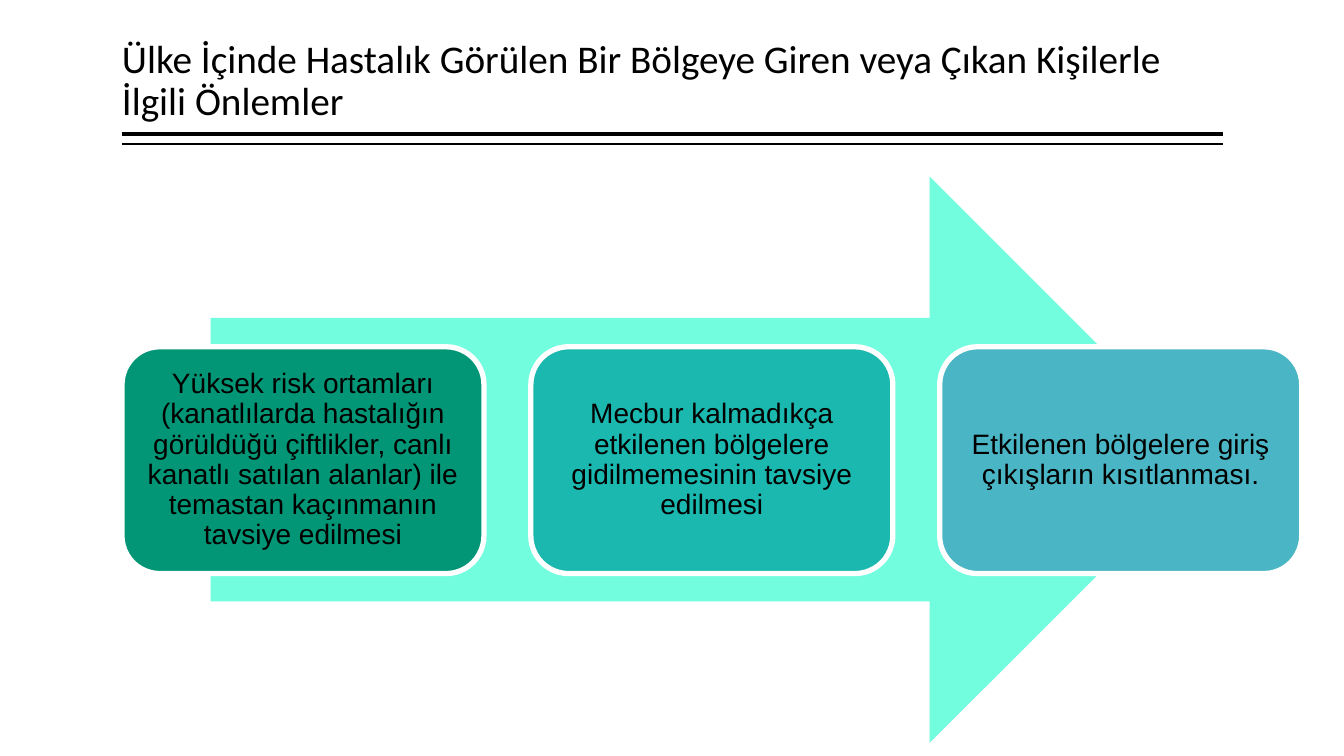
import pptx
import pptx.util
import pptx.dml.color
import pptx.enum.shapes
import pptx.enum.text
from lxml import etree

Inches, Pt = pptx.util.Inches, pptx.util.Pt
RGB = pptx.dml.color.RGBColor.from_string
SHAPE = pptx.enum.shapes.MSO_SHAPE
ANCHOR = pptx.enum.text.MSO_ANCHOR
ALIGN = pptx.enum.text.PP_ALIGN

THEME = {
    "ink": RGB("000000"),
    "outline": RGB("FFFFFF"),
    "arrow": RGB("72FDDF"),
    "cards": [RGB("029676"), RGB("1BB8B0"), RGB("4AB5C4")],
    "title": {"name": "Calibri", "size": Pt(28), "bold": False},
    "body": {"name": "Arial", "size": Pt(20)},
}
LEFT, WIDTH = 1.21, 10.92
CARD_TOP, CARD_W, CARD_H, CARD_STEP = 3.44, 3.59, 2.25, 4.055
CARD_TEXTS = [
    "Yüksek risk ortamları (kanatlılarda hastalığın görüldüğü çiftlikler, "
    "canlı kanatlı satılan alanlar) ile temastan kaçınmanın tavsiye edilmesi",
    "Mecbur kalmadıkça etkilenen bölgelere gidilmemesinin tavsiye edilmesi",
    "Etkilenen bölgelere giriş çıkışların kısıtlanması.",
]


def write_text(sp, text, font, align, anchor, inset_x, inset_y):
    tf = sp.text_frame
    frame_format = {
        "word_wrap": True, "auto_size": pptx.enum.text.MSO_AUTO_SIZE.NONE,
        "vertical_anchor": anchor,
        "margin_left": Inches(inset_x), "margin_right": Inches(inset_x),
        "margin_top": Inches(inset_y), "margin_bottom": Inches(inset_y),
    }
    for name, value in frame_format.items():
        setattr(tf, name, value)
    p = tf.paragraphs[0]
    p.alignment, p.line_spacing = align, 0.9
    r = p.add_run()
    r.text = text
    for name, value in font.items():
        setattr(r.font, name, value)
    r.font.color.rgb = THEME["ink"]


def add_filled(s, kind, left, top, width, height, color):
    sp = s.shapes.add_shape(kind, Inches(left), Inches(top), Inches(width), Inches(height))
    sp.shadow.inherit = False
    sp.fill.solid()
    sp.fill.fore_color.rgb = color
    return sp


prs = pptx.Presentation()
prs.slide_width, prs.slide_height = Inches(13.33), Inches(7.5)
s = prs.slides.add_slide(prs.slide_layouts[5])

# Title with its double rule
title = s.shapes.title
title.left, title.top = Inches(LEFT), Inches(0.08)
title.width, title.height = Inches(WIDTH), Inches(1.2)
write_text(title, "Ülke İçinde Hastalık Görülen Bir Bölgeye Giren veya Çıkan Kişilerle İlgili Önlemler",
           THEME["title"], ALIGN.LEFT, ANCHOR.BOTTOM, 0, 0.05)

for y, weight in [(1.33, 3), (1.43, 1)]:
    rule = s.shapes.add_connector(pptx.enum.shapes.MSO_CONNECTOR.STRAIGHT,
                                  Inches(LEFT), Inches(y), Inches(LEFT + WIDTH), Inches(y))
    rule.line.color.rgb = THEME["ink"]
    rule.line.width = Pt(weight)
    etree.SubElement(rule._element.spPr, pptx.oxml.ns.qn("a:effectLst"))

# Arrow behind the three cards
arrow = add_filled(s, SHAPE.RIGHT_ARROW, 2.09, 1.75, 9.94, 5.62, THEME["arrow"])
arrow.line.fill.background()

for i, (text, color) in enumerate(zip(CARD_TEXTS, THEME["cards"])):
    card = add_filled(s, SHAPE.ROUNDED_RECTANGLE, LEFT + i * CARD_STEP, CARD_TOP, CARD_W, CARD_H, color)
    card.line.color.rgb = THEME["outline"]
    card.line.width = Pt(3.78)
    write_text(card, text, THEME["body"], ALIGN.CENTER, ANCHOR.MIDDLE, 0.08, 0.08)

prs.save("out.pptx")
